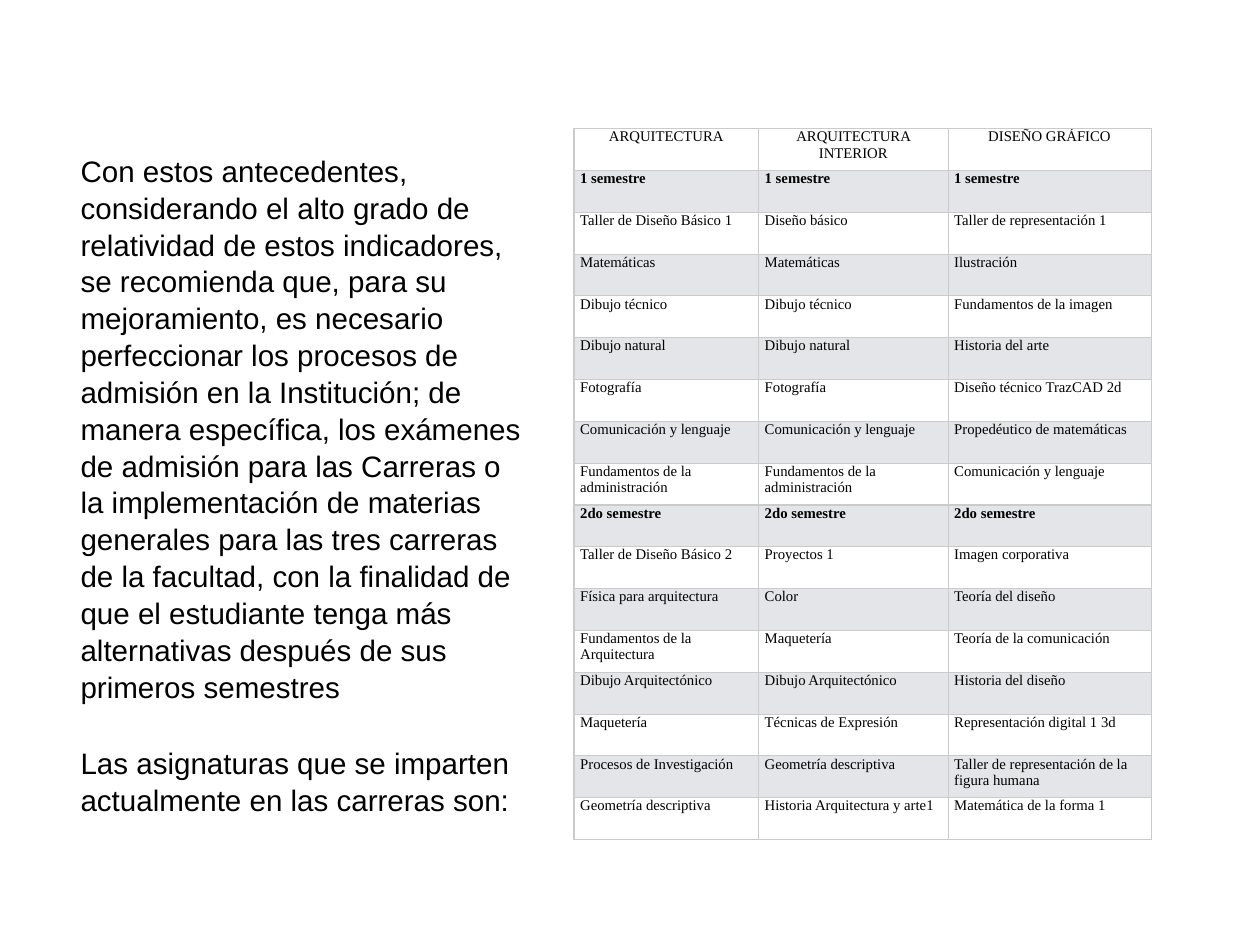
"""Build the slide on admission advice and the subjects of three degrees."""
from dataclasses import dataclass

from pptx import Presentation
from pptx import util as u
from pptx.dml.color import RGBColor
from pptx.enum import text
from pptx.oxml import parse_xml
from pptx.oxml.ns import nsdecls
from pptx.slide import Slide
from pptx.table import _Cell as Cell

PX = 6350


@dataclass(frozen=True)
class Theme:
    """Colours, fonts and type sizes of the slide."""
    ink: str = "000000"
    plain: str = "FFFFFF"
    band: str = "E3E5E8"
    rule: str = "CBCBCB"
    sans: str = "Arial"
    serif: str = "Times New Roman"
    body: int = 24
    small: int = 12


@dataclass(frozen=True)
class Box:
    """A place on the slide in px."""
    left: int
    top: int
    width: int
    height: int

    def emu(self) -> tuple[u.Emu, ...]:
        """Return the place in EMU."""
        return tuple(px(n) for n in (self.left, self.top, self.width, self.height))


@dataclass(frozen=True)
class Row:
    """One line of the table, with its look."""
    cells: tuple[str, str, str]
    bold: bool = False
    head: bool = False


THEME = Theme()
PROSE = Box(122, 193, 743, 1188)
COLS = (300, 308, 330)
ROW = 68
ADVICE = (
    "Con estos antecedentes, considerando el alto grado de relatividad de estos "
    "indicadores, se recomienda que, para su mejoramiento, es necesario perfeccionar "
    "los procesos de admisión en la Institución; de manera específica, los exámenes "
    "de admisión para las Carreras o la implementación de materias generales para "
    "las tres carreras de la facultad, con la finalidad de que el estudiante tenga "
    "más alternativas después de sus primeros semestres",
    "Las asignaturas que se imparten actualmente en las carreras son:",
)
ROWS = (
    Row(("ARQUITECTURA", "ARQUITECTURA INTERIOR", "DISEÑO GRÁFICO"), head=True),
    Row(("1 semestre",) * 3, bold=True),
    Row(("Taller de Diseño Básico 1", "Diseño básico", "Taller de representación 1")),
    Row(("Matemáticas", "Matemáticas", "Ilustración")),
    Row(("Dibujo técnico", "Dibujo técnico", "Fundamentos de la imagen")),
    Row(("Dibujo natural", "Dibujo natural", "Historia del arte")),
    Row(("Fotografía", "Fotografía", "Diseño técnico TrazCAD 2d")),
    Row(("Comunicación y lenguaje", "Comunicación y lenguaje",
         "Propedéutico de matemáticas")),
    Row(("Fundamentos de la administración", "Fundamentos de la administración",
         "Comunicación y lenguaje")),
    Row(("2do semestre",) * 3, bold=True),
    Row(("Taller de Diseño Básico 2", "Proyectos 1", "Imagen corporativa")),
    Row(("Física para arquitectura", "Color", "Teoría del diseño")),
    Row(("Fundamentos de la Arquitectura", "Maquetería", "Teoría de la comunicación")),
    Row(("Dibujo Arquitectónico", "Dibujo Arquitectónico", "Historia del diseño")),
    Row(("Maquetería", "Técnicas de Expresión", "Representación digital 1 3d")),
    Row(("Procesos de Investigación", "Geometría descriptiva",
         "Taller de representación de la figura humana")),
    Row(("Geometría descriptiva", "Historia Arquitectura y arte1",
         "Matemática de la forma 1")),
)
GRID = Box(933, 209, sum(COLS), ROW * len(ROWS))


def px(count: int) -> u.Emu:
    """Turn px into EMU."""
    return u.Emu(count * PX)


def style(para: text, face: str, size: int, bold: bool = False) -> None:
    """Set the font of a paragraph."""
    font = para.font
    font.name, font.size, font.bold = face, u.Pt(size), bold
    font.color.rgb = RGBColor.from_string(THEME.ink)


def edge(cell: Cell) -> None:
    """Draw a thin line on all four sides of a cell."""
    props = cell._tc.get_or_add_tcPr()
    for at, side in enumerate("LRTB"):
        props.insert(at, parse_xml(
            f'<a:ln{side} {nsdecls("a")} w="{u.Pt(1)}"><a:solidFill>'
            f'<a:srgbClr val="{THEME.rule}"/></a:solidFill></a:ln{side}>'))


def prose(slide: Slide) -> None:
    """Write the advice at the left."""
    frame = slide.shapes.add_textbox(*PROSE.emu()).text_frame
    frame.word_wrap = True
    frame.vertical_anchor = text.MSO_ANCHOR.MIDDLE
    frame.margin_left = frame.margin_right = px(9)
    frame.margin_top = frame.margin_bottom = px(9)
    frame.text = "\n".join(ADVICE)
    for para in frame.paragraphs:
        style(para, THEME.sans, THEME.body)
        para.space_before = u.Pt(32)
        para.line_spacing = 1.04


def fill(cell: Cell, words: str, row: Row, tint: str) -> None:
    """Write and colour one cell."""
    cell.text = words
    cell.margin_left = cell.margin_right = px(10)
    cell.margin_top = cell.margin_bottom = 0
    para = cell.text_frame.paragraphs[0]
    style(para, THEME.serif, THEME.small, row.bold)
    para.alignment = text.PP_ALIGN.CENTER if row.head else text.PP_ALIGN.LEFT
    edge(cell)
    cell.fill.solid()
    cell.fill.fore_color.rgb = RGBColor.from_string(tint)


def grid(slide: Slide) -> None:
    """Lay out the table of subjects."""
    table = slide.shapes.add_table(len(ROWS), len(COLS), *GRID.emu()).table
    for col, width in zip(table.columns, COLS):
        col.width = px(width)
    for i, row in enumerate(ROWS):
        table.rows[i].height = px(ROW)
        tint = THEME.band if i % 2 else THEME.plain
        for j, words in enumerate(row.cells):
            fill(table.cell(i, j), words, row, tint)


def main() -> None:
    """Build and save the slide."""
    deck = Presentation()
    deck.slide_width, deck.slide_height = px(2048), px(1536)
    slide = deck.slides.add_slide(deck.slide_layouts[6])
    prose(slide)
    grid(slide)
    deck.save("out.pptx")


if __name__ == "__main__":
    main()
